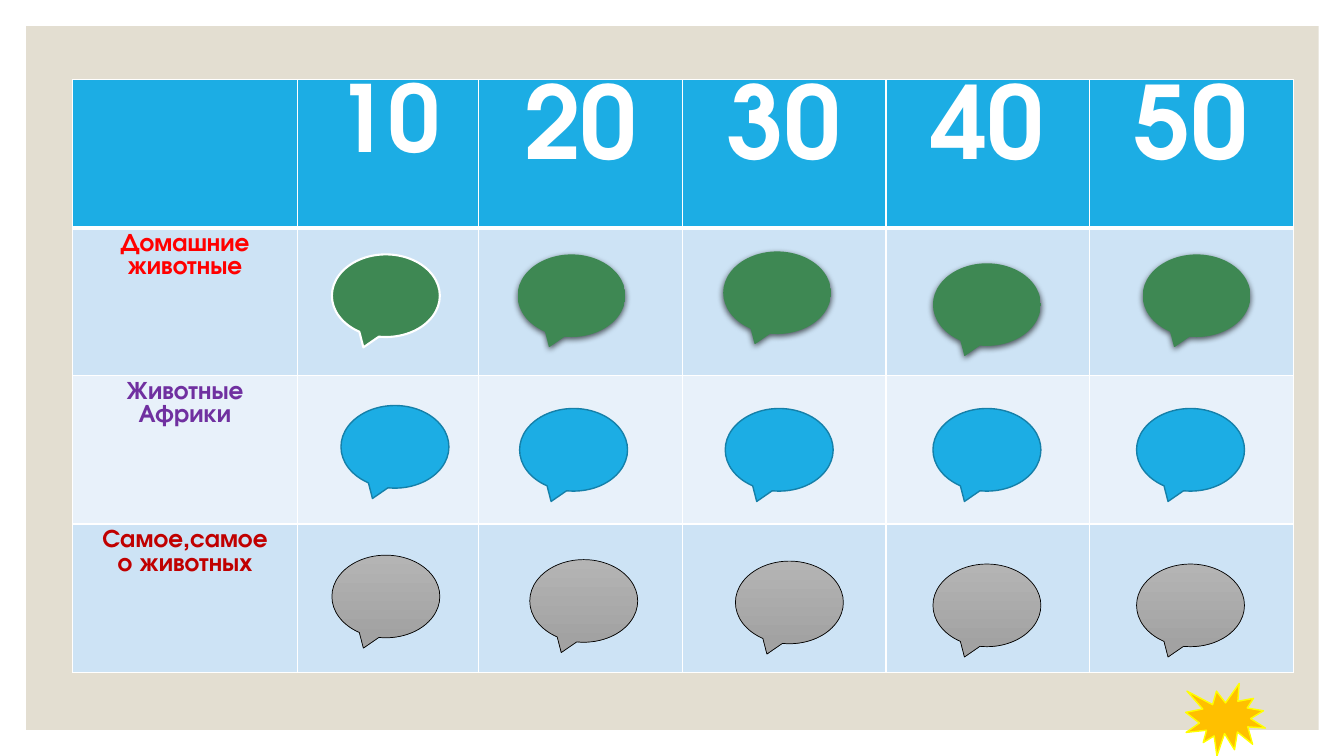
import dataclasses
from typing import Optional

import lxml.etree
import pptx
import pptx.dml.color
import pptx.enum.shapes
import pptx.enum.text
import pptx.oxml
import pptx.oxml.ns
import pptx.util

FONT = "TeX Gyre Adventor"
SHAPE = pptx.enum.shapes.MSO_SHAPE
qn = pptx.oxml.ns.qn

# Lengths are percentages of the slide's width and height
SLIDE_W, SLIDE_H = pptx.util.Inches(13.33), pptx.util.Inches(7.5)
TABLE_X, TABLE_Y = 5.4, 10.53
COLS = [16.73, 13.5] + [15.15] * 4
ROW = 19.6
CALLOUT_W, CALLOUT_H = 8.03, 10.93

HEADER_FILL = "1CADE4"
POINTS = [("10", 66), ("20", 72), ("30", 72), ("40", 72), ("50", 72)]


@dataclasses.dataclass
class Style:
    fills: tuple[str, ...]
    line: Optional[str] = None
    width: float = 1
    shadow: bool = False


@dataclasses.dataclass
class Topic:
    lines: tuple[str, ...]
    color: str
    band: str
    style: Style
    # Left and top of each callout as shares of its cell
    places: list[tuple[float, float]]
    first: Optional[Style] = None


TOPICS = [
    Topic(("Домашние животные",), "FF0000", "CDE3F5",
          Style(("3E8853", "3C8951"), shadow=True),
          [(.19, .18), (.19, .18), (.2, .16), (.23, .24), (.26, .18)],
          first=Style(("3E8853",), "FFFFFF", 1.5)),
    Topic(("Животные", "Африки"), "7030A0", "E8F1FA",
          Style(("1CADE4",), "1580A9"),
          [(.24, .2), (.2, .22), (.21, .22), (.23, .22), (.23, .22)]),
    Topic(("Самое,самое", "о животных"), "C00000", "CDE3F5",
          Style(("B4B4B4", "A2A2A2"), "000000", 0.5),
          [(.19, .21), (.25, .24), (.26, .25), (.23, .27), (.23, .27)]),
]


def rgb(value: str) -> pptx.dml.color.RGBColor:
    return pptx.dml.color.RGBColor.from_string(value)


def box(x: float, y: float, w: float, h: float) -> list[int]:
    return [int(v * full / 100)
            for v, full in ((x, SLIDE_W), (y, SLIDE_H), (w, SLIDE_W), (h, SLIDE_H))]


def add_shadow(sp) -> None:
    effects = sp._element.spPr.find(qn("a:effectLst"))
    shadow = lxml.etree.SubElement(
        effects, qn("a:outerShdw"), blurRad=str(pptx.util.Pt(4.5)),
        dist=str(pptx.util.Pt(1.5)), dir="5400000", algn="ctr", rotWithShape="0")
    color = lxml.etree.SubElement(shadow, qn("a:srgbClr"), val="000000")
    lxml.etree.SubElement(color, qn("a:alpha"), val="63000")


def add_shape(s, kind, place: list[int], style: Style) -> None:
    sp = s.shapes.add_shape(kind, *place)
    sp.shadow.inherit = False
    if len(style.fills) > 1:
        sp.fill.gradient()
        sp.fill.gradient_angle = 270
        for stop, color, pos in zip(sp.fill.gradient_stops, style.fills, (0, 1)):
            stop.color.rgb = rgb(color)
            stop.position = pos
    else:
        sp.fill.solid()
        sp.fill.fore_color.rgb = rgb(style.fills[0])
    if style.line:
        sp.line.color.rgb = rgb(style.line)
        sp.line.width = pptx.util.Pt(style.width)
    else:
        sp.line.fill.background()
    if style.shadow:
        add_shadow(sp)


def write(tf, *lines: str, size: float, color: str) -> None:
    for i, text in enumerate(lines):
        p = tf.paragraphs[0] if i == 0 else tf.add_paragraph()
        p.alignment = pptx.enum.text.PP_ALIGN.CENTER
        r = p.add_run()
        r.text = text
        r.font.name, r.font.size, r.font.bold = FONT, pptx.util.Pt(size), True
        r.font.color.rgb = rgb(color)


def format_cell(cell, fill: str, top: float = 1, bottom: float = 1) -> None:
    pr = cell._tc.get_or_add_tcPr()
    for side, width in (("L", 1), ("R", 1), ("T", top), ("B", bottom)):
        ln = lxml.etree.SubElement(pr, qn(f"a:ln{side}"), w=str(pptx.util.Pt(width)))
        solid = lxml.etree.SubElement(ln, qn("a:solidFill"))
        lxml.etree.SubElement(solid, qn("a:srgbClr"), val="FFFFFF")
    cell.fill.solid()
    cell.fill.fore_color.rgb = rgb(fill)


def add_board(s) -> None:
    rows = len(TOPICS) + 1
    place = box(TABLE_X, TABLE_Y, sum(COLS), ROW * rows)
    table = s.shapes.add_table(rows, len(COLS), *place).table
    for col, width in zip(table.columns, COLS):
        col.width = int(width * SLIDE_W / 100)

    # Header with points
    for c in range(len(COLS)):
        format_cell(table.cell(0, c), HEADER_FILL, bottom=3)
    for c, (text, size) in enumerate(POINTS, 1):
        write(table.cell(0, c).text_frame, text, size=size, color="FFFFFF")

    # Topic rows
    for i, topic in enumerate(TOPICS, 1):
        for c in range(len(COLS)):
            format_cell(table.cell(i, c), topic.band, top=3 if i == 1 else 1)
        write(table.cell(i, 0).text_frame, *topic.lines, size=18, color=topic.color)


def add_callouts(s) -> None:
    for i, topic in enumerate(TOPICS, 1):
        for c, (dx, dy) in enumerate(topic.places, 1):
            x = TABLE_X + sum(COLS[:c]) + dx * COLS[c]
            y = TABLE_Y + (i + dy) * ROW
            style = topic.first if c == 1 and topic.first else topic.style
            add_shape(s, SHAPE.OVAL_CALLOUT, box(x, y, CALLOUT_W, CALLOUT_H), style)


def main() -> None:
    prs = pptx.Presentation()
    prs.slide_width, prs.slide_height = SLIDE_W, SLIDE_H
    s = prs.slides.add_slide(prs.slide_layouts[6])

    # Backdrop, game board and final star
    add_shape(s, SHAPE.RECTANGLE, box(1.95, 3.47, 96.17, 93.07), Style(("E3DED1",)))
    add_board(s)
    add_callouts(s)
    add_shape(s, SHAPE.EXPLOSION1, box(88.22, 90.4, 5.93, 9.6),
              Style(("FFC000",), "FFFF00"))
    prs.save("out.pptx")


if __name__ == "__main__":
    main()
